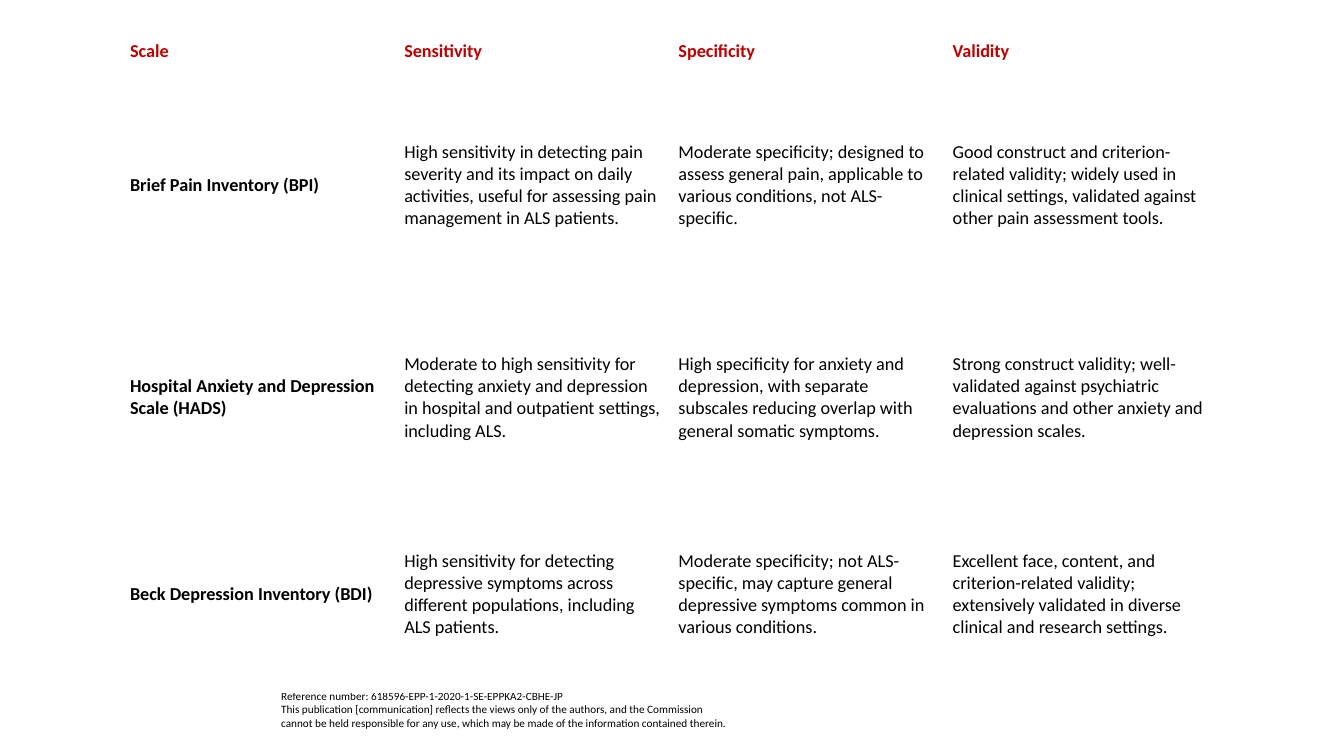
from pptx import Presentation
from pptx.dml.color import RGBColor
from pptx.enum.text import MSO_ANCHOR, MSO_AUTO_SIZE
from pptx.util import Inches, Pt

MIDDLE = MSO_ANCHOR.MIDDLE
GROW = MSO_AUTO_SIZE.SHAPE_TO_FIT_TEXT
FONT, RED, BLACK = "Calibri", "C00000", "000000"
TABLE_BOX = (1.22, 0.3, 10.88, 6.57)
FOOTER_BOX = (2.69, 6.79, 4.64, 0.5)
ROW_HEIGHTS = (0.41, 2.26, 1.95, 1.95)
CELL_FORMAT = {
    "vertical_anchor": MIDDLE,
    "margin_left": Inches(0.07),
    "margin_right": Inches(0.07),
    "margin_top": Inches(0.04),
    "margin_bottom": Inches(0.04),
}
SCALES = (
    ("Scale", "Sensitivity", "Specificity", "Validity"),
    (
        "Brief Pain Inventory (BPI)",
        "High sensitivity in detecting pain severity and its impact on daily activities, "
        "useful for assessing pain management in ALS patients.",
        "Moderate specificity; designed to assess general pain, applicable to various "
        "conditions, not ALS-specific.",
        "Good construct and criterion-related validity; widely used in clinical settings, "
        "validated against other pain assessment tools.",
    ),
    (
        "Hospital Anxiety and Depression Scale (HADS)",
        "Moderate to high sensitivity for detecting anxiety and depression in hospital and "
        "outpatient settings, including ALS.",
        "High specificity for anxiety and depression, with separate subscales reducing "
        "overlap with general somatic symptoms.",
        "Strong construct validity; well-validated against psychiatric evaluations and "
        "other anxiety and depression scales.",
    ),
    (
        "Beck Depression Inventory (BDI)",
        "High sensitivity for detecting depressive symptoms across different populations, "
        "including ALS patients.",
        "Moderate specificity; not ALS-specific, may capture general depressive symptoms "
        "common in various conditions.",
        "Excellent face, content, and criterion-related validity; extensively validated in "
        "diverse clinical and research settings.",
    ),
)
FOOTER = (
    "Reference number: 618596-EPP-1-2020-1-SE-EPPKA2-CBHE-JP\n"
    "This publication [communication] reflects the views only of the authors, and the "
    "Commission cannot be held responsible for any use, which may be made of the "
    "information contained therein."
)


def apply_format(target, values):
    """Set each named attribute on the target."""
    for name, value in values.items():
        setattr(target, name, value)


def write_text(text_frame, text, size, color=BLACK, bold=False):
    """Fill a text frame with uniformly formatted text."""
    text_frame.text = text
    for paragraph in text_frame.paragraphs:
        for run in paragraph.runs:
            apply_format(run.font, {"name": FONT, "size": Pt(size), "bold": bold})
            run.font.color.rgb = RGBColor.from_string(color)


def add_scale_table(slide, box):
    """Place the comparison of scales as an unfilled table in the box."""
    shape = slide.shapes.add_table(len(SCALES), len(SCALES[0]), *map(Inches, box))
    table = shape.table
    apply_format(table, {"first_row": False, "horz_banding": False})
    for row, height in zip(table.rows, ROW_HEIGHTS):
        row.height = Inches(height)
    for row_index, texts in enumerate(SCALES):
        for column_index, text in enumerate(texts):
            cell = table.cell(row_index, column_index)
            cell.fill.background()
            apply_format(cell, CELL_FORMAT)
            is_header = row_index == 0
            write_text(cell.text_frame, text, 13, RED if is_header else BLACK,
                       is_header or column_index == 0)


def add_footer(slide, box):
    """Place the reference number and disclaimer in the box."""
    text_frame = slide.shapes.add_textbox(*map(Inches, box)).text_frame
    apply_format(text_frame, {"word_wrap": True, "auto_size": GROW})
    write_text(text_frame, FOOTER, 8)


def main():
    """Build and save the presentation."""
    presentation = Presentation()
    apply_format(presentation, {"slide_width": Inches(13.33), "slide_height": Inches(7.5)})
    slide = presentation.slides.add_slide(presentation.slide_layouts[6])
    add_footer(slide, FOOTER_BOX)
    add_scale_table(slide, TABLE_BOX)
    presentation.save("out.pptx")


if __name__ == "__main__":
    main()
